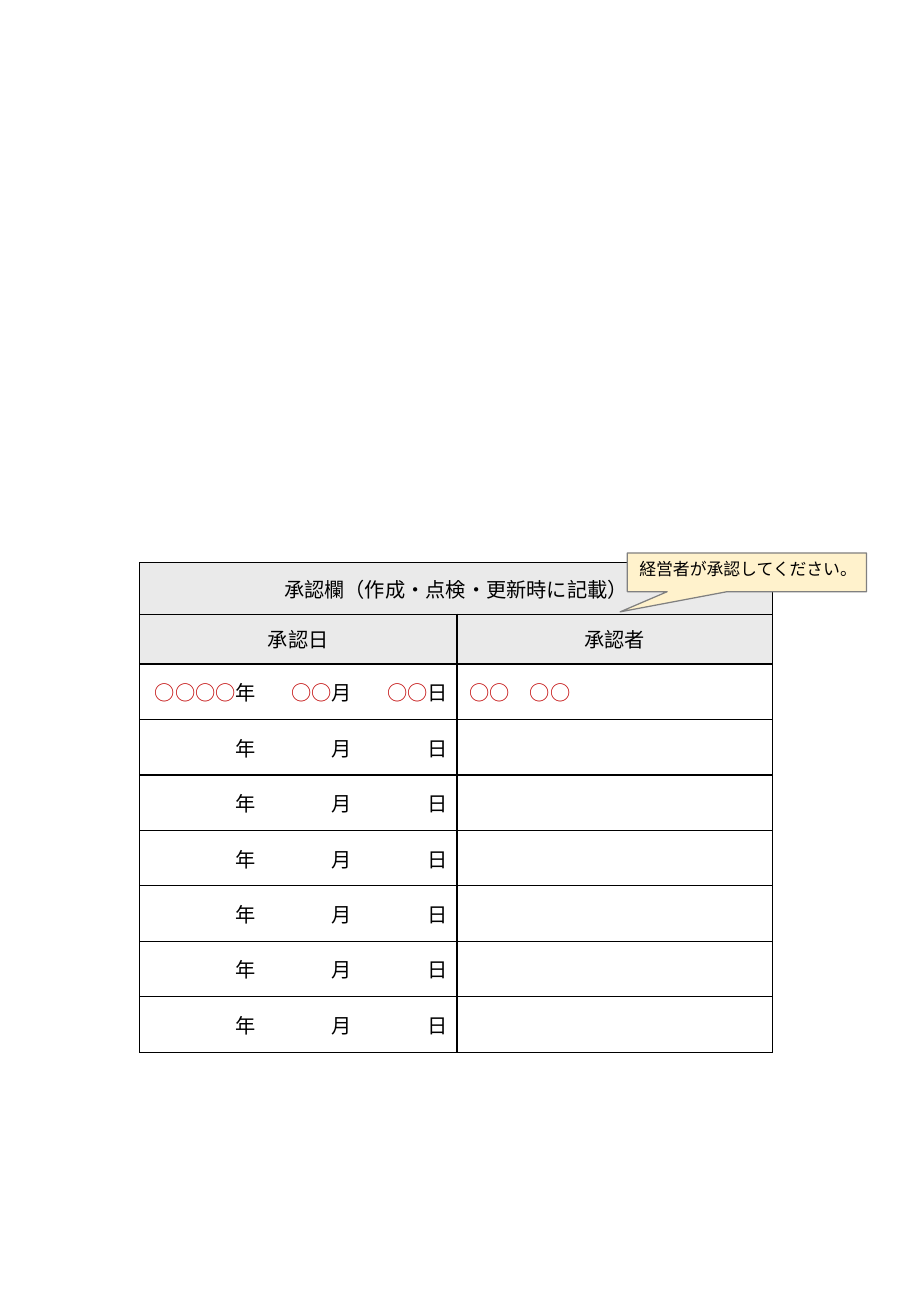
from lxml.etree import SubElement
from pptx import Presentation
from pptx.dml.color import RGBColor
from pptx.enum.shapes import MSO_SHAPE
from pptx.enum.text import MSO_ANCHOR, PP_ALIGN
from pptx.oxml.ns import qn
from pptx.util import Cm, Pt

FONT = "Noto Sans CJK JP"
COLORS = {
    "text": "000000",
    "example": "C00000",
    "header": "EAEAEA",
    "border": "000000",
    "callout": "FFF2CC",
    "callout_line": "808080",
}
COLUMN_WIDTHS = [2.01, 0.51, 1.5, 0.51, 1.5, 0.57, 6.6]
ROW_HEIGHTS = [1.08, 1.04] + [1.16] * 7
DATE_UNITS = ["年", "月", "日"]
EXAMPLE_DATE = ["○○○○", "○○", "○○"]
EXAMPLE_APPROVER = "○○　○○"
LINE_WIDTH = Pt(0.75)


def color(name):
    """Return the named colour."""
    return RGBColor.from_string(COLORS[name])


def write_text(text_frame, text, size=12, color_name="text", align=PP_ALIGN.LEFT):
    """Write one formatted line into a text frame."""
    paragraph = text_frame.paragraphs[0]
    paragraph.alignment = align
    run = paragraph.add_run()
    run.text = text
    run.font.size = Pt(size)
    run.font.color.rgb = color(color_name)
    run.font.name = FONT
    SubElement(run.font._element, qn("a:ea"), typeface=FONT)


def set_borders(cell, sides):
    """Draw the cell borders listed in sides and clear the others."""
    properties = cell._tc.get_or_add_tcPr()
    for side in "LRTB":
        line = SubElement(properties, qn(f"a:ln{side}"), w=str(LINE_WIDTH))
        if side in sides:
            fill = SubElement(line, qn("a:solidFill"))
            SubElement(fill, qn("a:srgbClr"), val=COLORS["border"])
        else:
            SubElement(line, qn("a:noFill"))


def format_cell(cell, sides="LRTB", header=False):
    """Set the borders, fill and anchor of a cell."""
    set_borders(cell, sides)
    cell.vertical_anchor = MSO_ANCHOR.MIDDLE
    if header:
        cell.fill.solid()
        cell.fill.fore_color.rgb = color("header")
    else:
        cell.fill.background()


def add_header(table, row, first, last, text):
    """Fill a header cell that spans the columns from first to last."""
    for column in range(first, last + 1):
        format_cell(table.cell(row, column), header=True)
    cell = table.cell(row, first)
    if last > first:
        cell.merge(table.cell(row, last))
    write_text(cell.text_frame, text, align=PP_ALIGN.CENTER)


def add_entry(table, row, date=("", "", ""), approver=""):
    """Fill one row with a date and an approver."""
    for index, (value, unit) in enumerate(zip(date, DATE_UNITS)):
        value_cell = table.cell(row, 2 * index)
        unit_cell = table.cell(row, 2 * index + 1)
        format_cell(value_cell, "LTB" if index == 0 else "TB")
        format_cell(unit_cell, "RTB" if index == 2 else "TB")
        for cell in (value_cell, unit_cell):
            cell.margin_left = cell.margin_right = 0
        if value:
            write_text(value_cell.text_frame, value, color_name="example", align=PP_ALIGN.RIGHT)
        write_text(unit_cell.text_frame, unit)
    approver_cell = table.cell(row, 6)
    format_cell(approver_cell)
    if approver:
        write_text(approver_cell.text_frame, approver, color_name="example")


def add_approval_table(slide):
    """Add the approval table."""
    frame = slide.shapes.add_table(
        len(ROW_HEIGHTS), len(COLUMN_WIDTHS), Cm(2.92), Cm(11.76),
        Cm(sum(COLUMN_WIDTHS)), Cm(sum(ROW_HEIGHTS)),
    )
    table = frame.table
    table.first_row = table.horz_banding = False
    for column, width in zip(table.columns, COLUMN_WIDTHS):
        column.width = Cm(width)
    for row, height in zip(table.rows, ROW_HEIGHTS):
        row.height = Cm(height)
    add_header(table, 0, 0, 6, "承認欄（作成・点検・更新時に記載）")
    add_header(table, 1, 0, 5, "承認日")
    add_header(table, 1, 6, 6, "承認者")
    add_entry(table, 2, EXAMPLE_DATE, EXAMPLE_APPROVER)
    for row in range(3, len(ROW_HEIGHTS)):
        add_entry(table, row)


def add_callout(slide, text):
    """Add the callout that points at the table heading."""
    shape = slide.shapes.add_shape(
        MSO_SHAPE.RECTANGULAR_CALLOUT, Cm(13.12), Cm(11.56), Cm(5), Cm(0.81)
    )
    shape.adjustments[0] = -0.53
    shape.adjustments[1] = 1.02
    shape.shadow.inherit = False
    shape.fill.solid()
    shape.fill.fore_color.rgb = color("callout")
    shape.line.color.rgb = color("callout_line")
    shape.line.width = LINE_WIDTH
    shape.text_frame.word_wrap = True
    shape.text_frame.vertical_anchor = MSO_ANCHOR.TOP
    write_text(shape.text_frame, text, size=10)


def main():
    """Build the approval slide and save it."""
    presentation = Presentation()
    presentation.slide_width = Cm(19.05)
    presentation.slide_height = Cm(27.51)
    slide = presentation.slides.add_slide(presentation.slide_layouts[6])
    add_approval_table(slide)
    add_callout(slide, "経営者が承認してください。")
    presentation.save("out.pptx")


if __name__ == "__main__":
    main()
